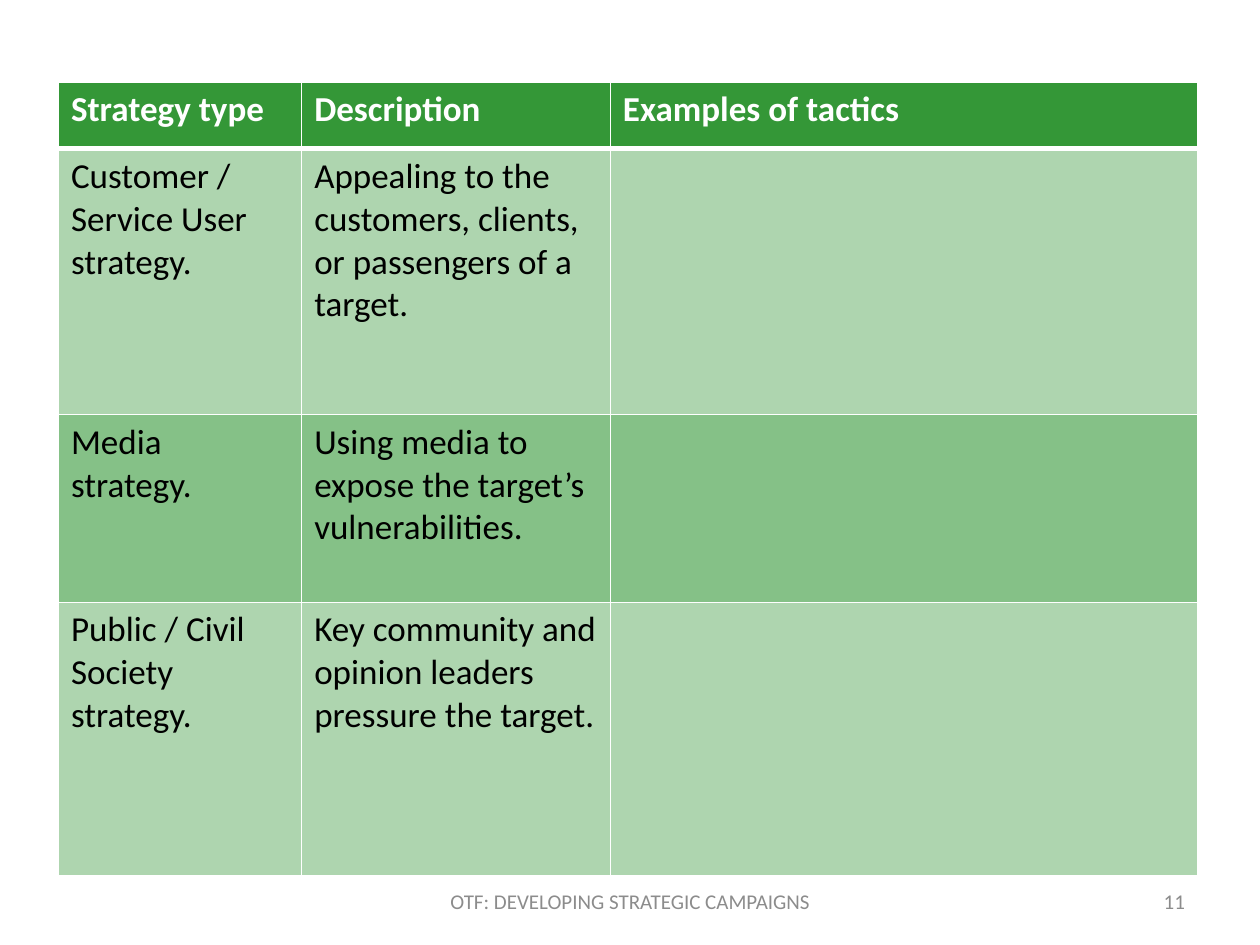
"""Build a slide with a table of campaign strategies, a footer and a slide number."""
from lxml import etree
from pptx import Presentation
from pptx.dml.color import RGBColor
from pptx.enum.text import MSO_ANCHOR, PP_ALIGN
from pptx.oxml.ns import qn
from pptx.util import Pt

CENTER, RIGHT = PP_ALIGN.CENTER, PP_ALIGN.RIGHT
MIDDLE = MSO_ANCHOR.MIDDLE
WHITE = RGBColor(0xFF, 0xFF, 0xFF)
BLACK = RGBColor(0, 0, 0)
GRAY = RGBColor(0x8C, 0x8C, 0x8C)
GREEN = RGBColor(0x34, 0x97, 0x37)
LIGHT_GREEN = RGBColor(0xAE, 0xD5, 0xAF)
MEDIUM_GREEN = RGBColor(0x85, 0xC1, 0x87)

COLUMN_WIDTHS = [139, 176.4, 335.5]
ROWS = [
    (38.2, GREEN, ["Strategy type", "Description", "Examples of tactics"]),
    (151.9, LIGHT_GREEN, ["Customer / Service User strategy.",
                          "Appealing to the customers, clients, or passengers of a target.", ""]),
    (107.3, MEDIUM_GREEN, ["Media strategy.",
                           "Using media to expose the target’s vulnerabilities.", ""]),
    (156.2, LIGHT_GREEN, ["Public / Civil Society strategy.",
                          "Key community and opinion leaders pressure the target.", ""]),
]
FOOTERS = [
    ("OTF: DEVELOPING STRATEGIC CAMPAIGNS", 246.2, 228, CENTER),
    ("11", 516.2, 168, RIGHT),
]


def format_font(font, **values):
    color = values.pop("color")
    for name, value in values.items():
        setattr(font, name, value)
    font.color.rgb = color


def add_border(cell, side, width):
    properties = cell._tc.get_or_add_tcPr()
    line = etree.SubElement(properties, qn(f"a:ln{side}"), w=str(Pt(width)))
    fill = etree.SubElement(line, qn("a:solidFill"))
    etree.SubElement(fill, qn("a:srgbClr"), val=str(WHITE))


presentation = Presentation()
presentation.slide_width, presentation.slide_height = Pt(720), Pt(540)
slide = presentation.slides.add_slide(presentation.slide_layouts[6])

for text, left, width, alignment in FOOTERS:
    shape = slide.shapes.add_textbox(Pt(left), Pt(500.5), Pt(width), Pt(28.8))
    frame = shape.text_frame
    frame.word_wrap = True
    frame.vertical_anchor = MIDDLE
    paragraph = frame.paragraphs[0]
    paragraph.text = text
    paragraph.alignment = alignment
    format_font(paragraph.runs[0].font, name="Calibri", size=Pt(12), color=GRAY)

table = slide.shapes.add_table(
    len(ROWS), len(COLUMN_WIDTHS), Pt(33.4), Pt(46.8),
    Pt(sum(COLUMN_WIDTHS)), Pt(sum(row[0] for row in ROWS))).table
for column, width in zip(table.columns, COLUMN_WIDTHS):
    column.width = Pt(width)

for index, (height, fill_color, texts) in enumerate(ROWS):
    row = table.rows[index]
    row.height = Pt(height)
    is_header = index == 0
    border_widths = {"L": 1, "R": 1, "T": 3 if index == 1 else 1, "B": 3 if is_header else 1}
    for cell, text in zip(row.cells, texts):
        for side, width in border_widths.items():
            add_border(cell, side, width)
        cell.fill.solid()
        cell.fill.fore_color.rgb = fill_color
        paragraph = cell.text_frame.paragraphs[0]
        paragraph.text = text
        format_font(paragraph.font, name="Calibri", size=Pt(20), bold=is_header,
                    color=WHITE if is_header else BLACK)
        for run in paragraph.runs:
            format_font(run.font, name="Calibri", size=Pt(20), bold=is_header,
                        color=WHITE if is_header else BLACK)

presentation.save("out.pptx")
